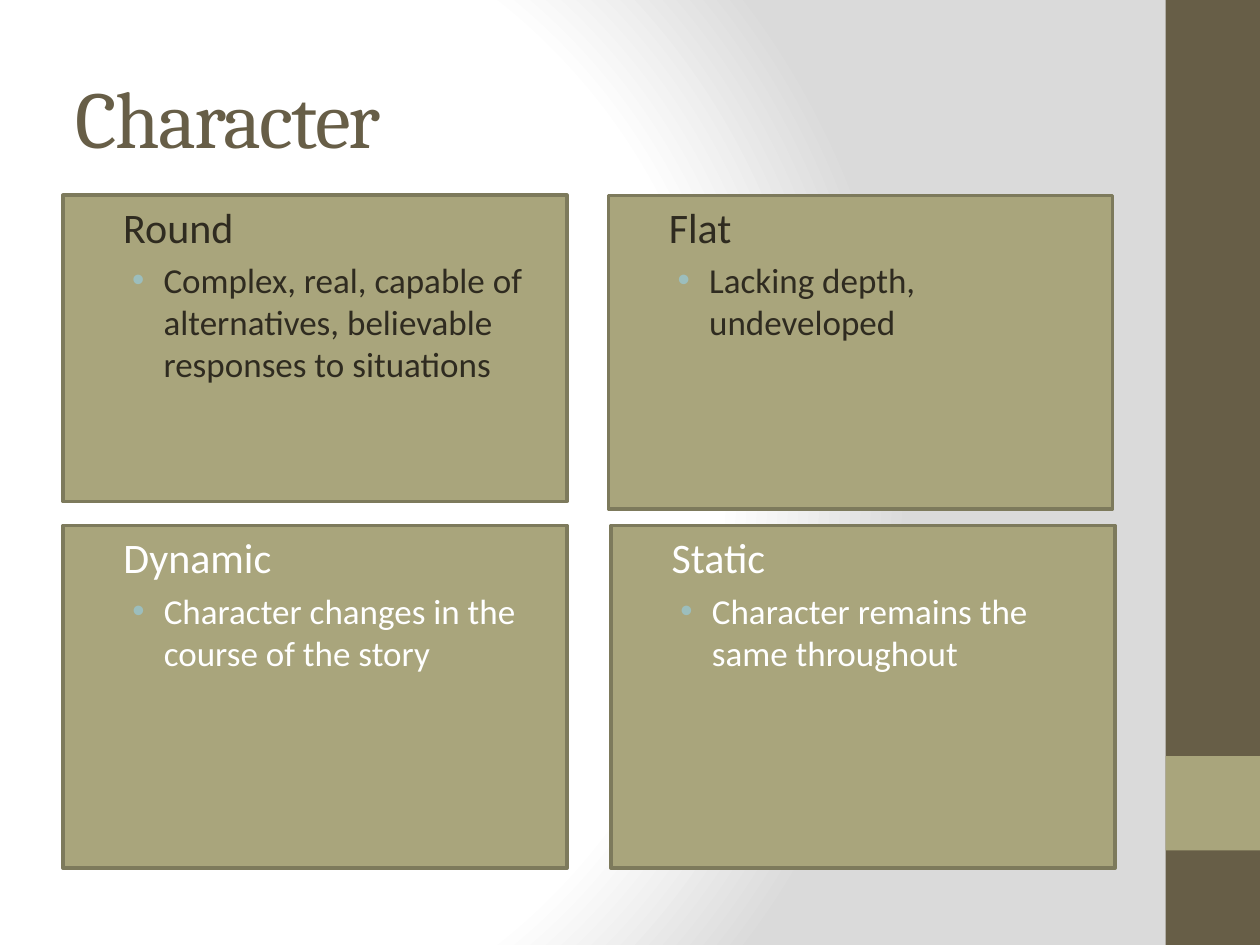
import pptx
import pptx.util
import pptx.dml.color
import pptx.enum.shapes
import pptx.enum.text
import pptx.oxml.ns
from lxml import etree

BROWN, OLIVE, EDGE = "675E47", "A9A57C", "7D7A5C"
DARK, WHITE, TEAL = "2F2B20", "FFFFFF", "9CBEBD"

# Grid: left edge and width of the columns, height of the rows
LEFT, WIDTH = 0.5, 4
TOP_ROW, BOTTOM_ROW = 1.55, 4.17
BAR_LEFT, BAR_WIDTH = 9.25, 0.75


def color(value):
    return pptx.dml.color.RGBColor.from_string(value)


def add_xml(parent, tag, **attributes):
    child = etree.SubElement(parent, pptx.oxml.ns.qn(tag))
    for name, value in attributes.items():
        child.set(name, str(value))
    return child


def place(shape, left, top, width, height):
    shape.left, shape.top, shape.width, shape.height = map(
        pptx.util.Inches, (left, top, width, height))


def add_rect(page):
    shape = page.shapes.add_shape(
        pptx.enum.shapes.MSO_SHAPE.RECTANGLE, 0, 0, 0, 0)
    shape.shadow.inherit = False
    return shape


def fill_shape(shape, fill, line=None):
    shape.fill.solid()
    shape.fill.fore_color.rgb = color(fill)
    if line:
        shape.line.color.rgb = color(line)
        shape.line.width = pptx.util.Pt(2)
    else:
        shape.line.fill.background()


def add_span(para, text, font, size, text_color):
    span = para.add_run()
    span.text = text
    span.font.name = font
    span.font.size = pptx.util.Pt(size)
    span.font.color.rgb = color(text_color)
    return span


def set_background(page):
    page.background.fill.gradient()
    gradient = page.element.find(".//" + pptx.oxml.ns.qn("a:gradFill"))
    for child in list(gradient):
        gradient.remove(child)
    stops = add_xml(gradient, "a:gsLst")
    for share, value in ((0, WHITE), (75, WHITE), (100, "DADADA")):
        stop = add_xml(stops, "a:gs", pos=share * 1000)
        add_xml(stop, "a:srgbClr", val=value)
    circle = add_xml(gradient, "a:path", path="circle")
    add_xml(circle, "a:fillToRect", l=20000, t=50000, r=100000, b=50000)


def format_bullet(para, indent, bullet_color):
    para.alignment = pptx.enum.text.PP_ALIGN.LEFT
    props = para._p.get_or_add_pPr()
    props.set("marL", str(pptx.util.Inches(indent)))
    props.set("indent", str(pptx.util.Inches(-0.25)))
    add_xml(add_xml(props, "a:spcBef"), "a:spcPct", val=20000)
    add_xml(add_xml(props, "a:buClr"), "a:srgbClr", val=bullet_color)
    add_xml(props, "a:buFont", typeface="Arial")
    add_xml(props, "a:buChar", char="•")


def fill_card(shape, heading, detail, text_color):
    fill_shape(shape, OLIVE, EDGE)
    frame = shape.text_frame
    frame.word_wrap = True
    frame.auto_size = pptx.enum.text.MSO_AUTO_SIZE.NONE
    frame.vertical_anchor = pptx.enum.text.MSO_ANCHOR.TOP
    levels = ((heading, 24, 0.38, OLIVE), (detail, 20, 0.7, TEAL))
    for level, (text, size, indent, bullet_color) in enumerate(levels):
        para = frame.add_paragraph() if level else frame.paragraphs[0]
        para.level = level
        format_bullet(para, indent, bullet_color)
        add_span(para, text, "Calibri", size, text_color)


def set_title(title, text):
    place(title, LEFT, 0.3, 8.33, 1.25)
    frame = title.text_frame
    frame.auto_size = pptx.enum.text.MSO_AUTO_SIZE.NONE
    frame.vertical_anchor = pptx.enum.text.MSO_ANCHOR.MIDDLE
    para = frame.paragraphs[0]
    para.alignment = pptx.enum.text.PP_ALIGN.LEFT
    span = add_span(para, text, "Cambria", 46, BROWN)
    span.font._element.set("spc", "-100")


def main():
    deck = pptx.Presentation()
    deck.slide_width = pptx.util.Inches(10)
    deck.slide_height = pptx.util.Inches(7.5)
    page = deck.slides.add_slide(deck.slide_layouts.get_by_name("Two Content"))
    title, left_body, right_body = page.placeholders
    set_background(page)
    set_title(title, "Character")

    # Side bar with its square accent
    for top, height, fill in ((0, 7.5, BROWN), (6, BAR_WIDTH, OLIVE)):
        bar = add_rect(page)
        place(bar, BAR_LEFT, top, BAR_WIDTH, height)
        fill_shape(bar, fill)

    # Four kinds of character
    cards = (
        (left_body, LEFT, BOTTOM_ROW, 2.72, WHITE, "Dynamic",
         "Character changes in the course of the story"),
        (right_body, 4.85, BOTTOM_ROW, 2.72, WHITE, "Static",
         "Character remains the same throughout"),
        (add_rect(page), LEFT, TOP_ROW, 2.43, DARK, "Round",
         "Complex, real, capable of alternatives, believable "
         "responses to situations"),
        (add_rect(page), 4.83, TOP_ROW, 2.49, DARK, "Flat",
         "Lacking depth, undeveloped"),
    )
    for shape, left, top, height, text_color, heading, detail in cards:
        place(shape, left, top, WIDTH, height)
        fill_card(shape, heading, detail, text_color)

    deck.save("out.pptx")


if __name__ == "__main__":
    main()
